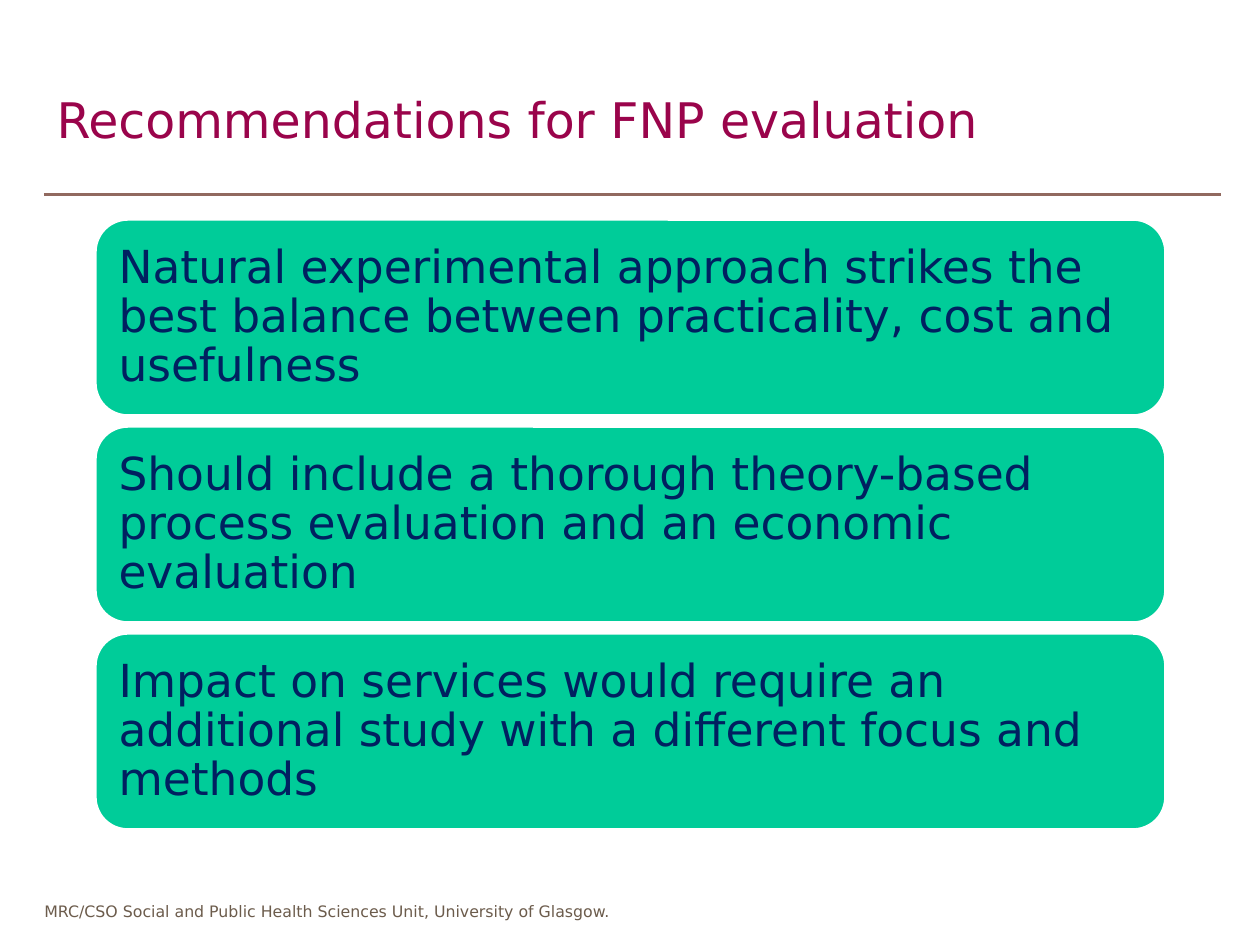
"""Build the slide of recommendations for the FNP evaluation."""
from dataclasses import dataclass

from lxml import etree
from pptx import Presentation
from pptx import util as u
from pptx.dml.color import RGBColor
from pptx.enum import shapes, text
from pptx.oxml import ns

PX = 914400 / 126
FONT = "DejaVu Sans"
WHITE = RGBColor(0xFF, 0xFF, 0xFF)
MAROON = RGBColor(0x9A, 0x04, 0x4B)
BROWN = RGBColor(0x91, 0x69, 0x5F)
TAUPE = RGBColor(0x6C, 0x5C, 0x4C)
GREEN = RGBColor(0x00, 0xCC, 0x99)
NAVY = RGBColor(0x00, 0x20, 0x60)

TITLE = "Recommendations for FNP evaluation"
UNIT = "MRC/CSO Social and Public Health Sciences Unit, University of Glasgow."
RECOMMENDATIONS = (
    "Natural experimental approach strikes the best balance between practicality, cost and usefulness",
    "Should include a thorough theory-based process evaluation and an economic evaluation",
    "Impact on services would require an additional study with a different focus and methods",
)


@dataclass(frozen=True)
class Box:
    left: int
    top: int
    width: int
    height: int

    def emu(self) -> tuple[int, ...]:
        return tuple(px(n) for n in (self.left, self.top, self.width, self.height))


FIRST_PANEL = Box(95, 219, 1071, 197)
PANEL_PITCH = 207
PANEL_INSET = 24


def px(length: int) -> u.Emu:
    return u.Emu(round(length * PX))


def write(frame, words: str, size: int, color: RGBColor):
    frame.text = words
    paragraph = frame.paragraphs[0]
    paragraph.alignment = text.PP_ALIGN.LEFT
    paragraph.font.name = FONT
    paragraph.font.size = u.Pt(size)
    paragraph.font.color.rgb = color
    return paragraph


def add_title(slide, box: Box) -> None:
    title = slide.shapes.title
    title.left, title.top, title.width, title.height = box.emu()
    title.text_frame.auto_size = text.MSO_AUTO_SIZE.NONE
    title.text_frame.vertical_anchor = text.MSO_ANCHOR.MIDDLE
    write(title.text_frame, TITLE, 28, MAROON)


def add_rule(slide, left: int, right: int, y: int) -> None:
    rule = slide.shapes.add_connector(
        shapes.MSO_CONNECTOR.STRAIGHT, px(left), px(y), px(right), px(y))
    rule.line.color.rgb = BROWN
    rule.line.width = u.Pt(1.75)
    etree.SubElement(rule._element.spPr, ns.qn("a:effectLst"))


def add_panel(slide, box: Box, recommendation: str) -> None:
    panel = slide.shapes.add_shape(shapes.MSO_SHAPE.ROUNDED_RECTANGLE, *box.emu())
    panel.shadow.inherit = False
    panel.fill.solid()
    panel.fill.fore_color.rgb = GREEN
    panel.line.color.rgb = WHITE
    panel.line.width = u.Pt(2)
    frame = panel.text_frame
    frame.word_wrap = True
    frame.vertical_anchor = text.MSO_ANCHOR.MIDDLE
    # The rounded corners add an inset of their own, so the margins allow for it.
    corner = round(box.height * 0.16667 * 0.29289)
    frame.margin_left = frame.margin_right = px(PANEL_INSET - corner)
    frame.margin_top = frame.margin_bottom = px(PANEL_INSET - corner)
    write(frame, recommendation, 26, NAVY).line_spacing = 0.9


def add_footer(slide, box: Box) -> None:
    footer = slide.shapes.add_textbox(*box.emu())
    footer.text_frame.word_wrap = False
    write(footer.text_frame, UNIT, 9, TAUPE)


def main() -> None:
    deck = Presentation()
    deck.slide_width, deck.slide_height = px(1260), px(945)
    slide = deck.slides.add_slide(deck.slide_layouts.get_by_name("Title Only"))
    add_footer(slide, Box(32, 896, 598, 32))
    add_rule(slide, 44, 1221, 195)
    add_title(slide, Box(44, 63, 1176, 112))
    first = FIRST_PANEL
    for row, recommendation in enumerate(RECOMMENDATIONS):
        box = Box(first.left, first.top + row * PANEL_PITCH, first.width, first.height)
        add_panel(slide, box, recommendation)
    deck.save("out.pptx")


if __name__ == "__main__":
    main()
